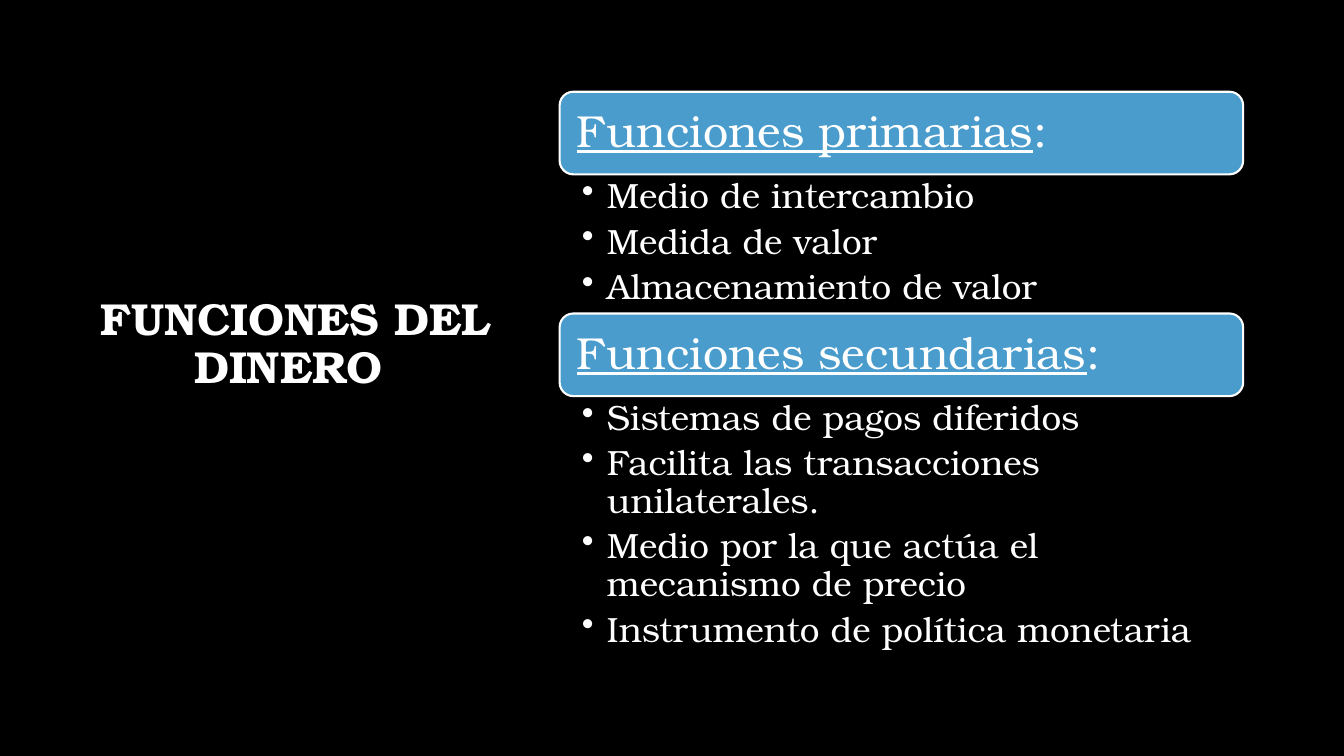
"""Builds a slide listing the primary and secondary functions of money."""
from lxml.etree import SubElement
from pptx import Presentation
from pptx.dml.color import RGBColor
from pptx.enum.shapes import MSO_SHAPE as Shape
from pptx.enum.text import MSO_ANCHOR as Anchor, PP_ALIGN as Align
from pptx.oxml.ns import qn
from pptx.util import Inches, Pt

BLACK = RGBColor(0x00, 0x00, 0x00)
WHITE = RGBColor(0xFF, 0xFF, 0xFF)
BLUE = RGBColor(0x4A, 0x9C, 0xCC)
FONT = "TeX Gyre Bonum"

COLUMN_LEFT, COLUMN_WIDTH = Inches(5.55), Inches(6.78)
HEADER_HEIGHT = Inches(0.82)
HEADER_INSET = Inches(0.13)
INDENT = Inches(0.25)

SECTIONS = [
    ("Funciones primarias", 1.38, [
        "Medio de intercambio",
        "Medida de valor",
        "Almacenamiento de valor",
    ]),
    ("Funciones secundarias", 2.17, [
        "Sistemas de pagos diferidos",
        "Facilita las transacciones unilaterales.",
        "Medio por la que actúa el mecanismo de precio",
        "Instrumento de política monetaria",
    ]),
]


def add_span(para, text, size, bold=False, underline=False):
    para.line_spacing = 0.9
    span = para.add_run()
    span.text = text
    span.font.name = FONT
    span.font.size = Pt(size)
    span.font.color.rgb = WHITE
    span.font.bold = bold
    span.font.underline = underline


def set_insets(frame, left, right, vertical):
    frame.word_wrap = True
    frame.margin_left, frame.margin_right = left, right
    frame.margin_top = frame.margin_bottom = vertical


deck = Presentation()
deck.slide_width, deck.slide_height = Inches(13.33), Inches(7.5)
page = deck.slides.add_slide(deck.slide_layouts[6])
page.background.fill.solid()
page.background.fill.fore_color.rgb = BLACK

title = page.shapes.add_textbox(Inches(0.71), Inches(2.89), Inches(4.3), Inches(1.22))
title.text_frame.word_wrap = True
title_para = title.text_frame.paragraphs[0]
title_para.alignment = Align.CENTER
add_span(title_para, " FUNCIONES DEL DINERO", 32, bold=True)

top = Inches(0.91)
for heading, list_height, items in SECTIONS:
    header = page.shapes.add_shape(
        Shape.ROUNDED_RECTANGLE, COLUMN_LEFT, top, COLUMN_WIDTH, HEADER_HEIGHT)
    header.shadow.inherit = False
    header.fill.solid()
    header.fill.fore_color.rgb = BLUE
    header.line.color.rgb = WHITE
    header.line.width = Pt(1.5)
    set_insets(header.text_frame, HEADER_INSET, HEADER_INSET, HEADER_INSET)
    header.text_frame.vertical_anchor = Anchor.MIDDLE
    header_para = header.text_frame.paragraphs[0]
    header_para.alignment = Align.LEFT
    add_span(header_para, heading, 32, underline=True)
    add_span(header_para, ":", 32)
    top += HEADER_HEIGHT

    box = page.shapes.add_textbox(COLUMN_LEFT, top, COLUMN_WIDTH, Inches(list_height))
    set_insets(box.text_frame, Inches(0.22), Inches(0.25), Inches(0.04))
    for index, item in enumerate(items):
        para = box.text_frame.add_paragraph() if index else box.text_frame.paragraphs[0]
        add_span(para, item, 25)
        para.level = 1
        para.space_after = Pt(5.4)
        properties = para._p.get_or_add_pPr()
        properties.set("marL", str(INDENT))
        properties.set("indent", str(-INDENT))
        SubElement(properties, qn("a:buChar")).set("char", "•")
    top += Inches(list_height)

deck.save("out.pptx")
